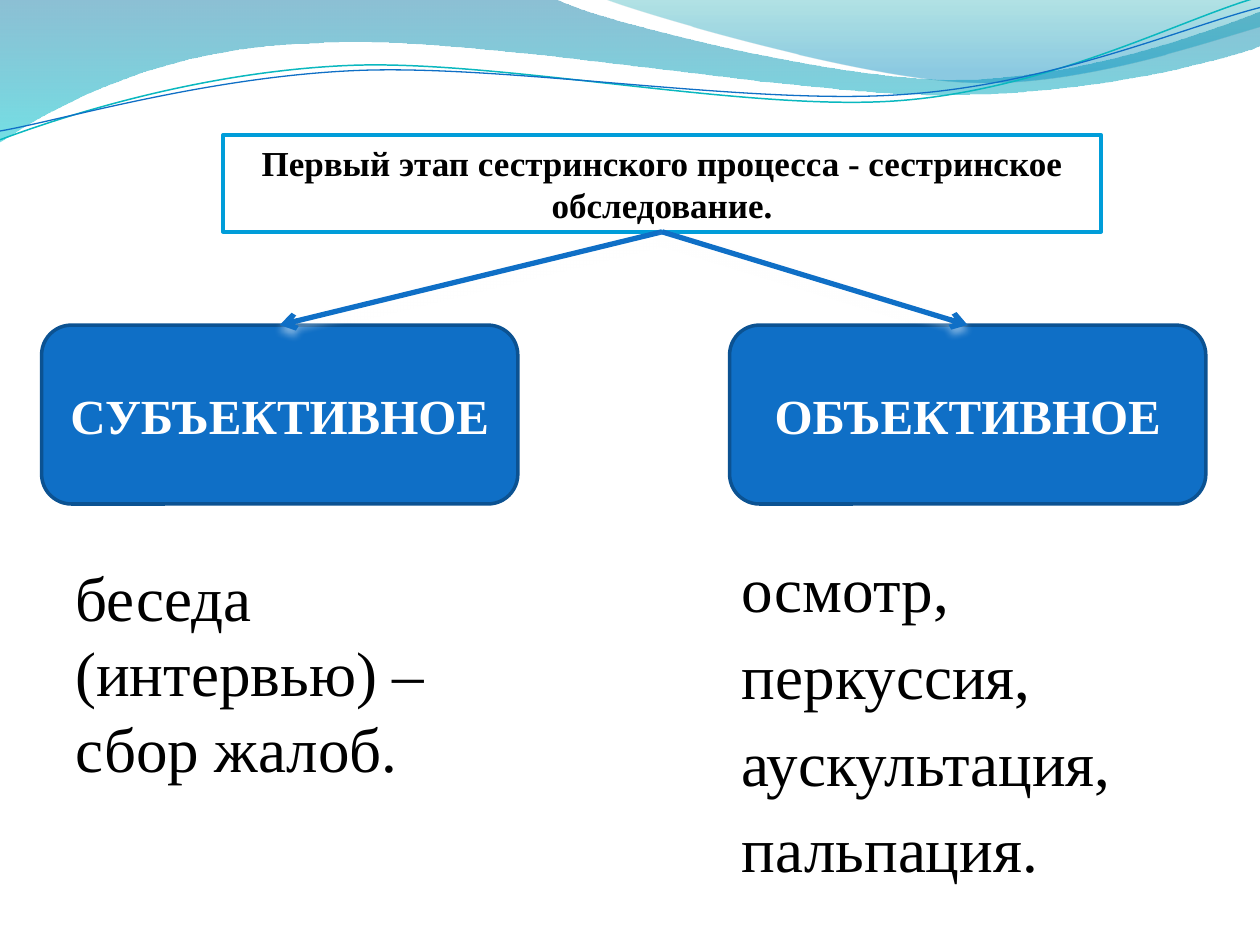
from lxml.etree import SubElement
from pptx import Presentation
from pptx.dml.color import RGBColor
from pptx.enum.shapes import MSO_CONNECTOR, MSO_SHAPE
from pptx.enum.text import MSO_ANCHOR, MSO_AUTO_SIZE, PP_ALIGN
from pptx.oxml.ns import qn
from pptx.util import Inches, Pt

FONT = "Times New Roman"
COLORS = {
    "white": "FFFFFF", "black": "000000", "blue": "0F6FC6", "navy": "0B5292",
    "sky": "009DD9", "teal_line": "0AB8BF", "deep_teal": "0074A1",
    "aqua": "00C6CF", "teal": "00A1A9", "azure": "008BBF",
}

TITLE = "Первый этап сестринского процесса - сестринское обследование."
TITLE_AREA = (1.77, 1.07, 6.97, 0.77)
KIND_TOP, KIND_SIZE = 2.58, (3.78, 1.42)
# Kind of examination, its left edge, its methods, area of the methods
KINDS = [
    ("СУБЪЕКТИВНОЕ", 0.33, "беседа (интервью) – сбор жалоб.", (0.5, 4.38, 3.44, 1.92)),
    ("ОБЪЕКТИВНОЕ", 5.79, "осмотр, перкуссия, аускультация, пальпация.", (5.79, 4.22, 4.25, 2.89)),
]

# A pair is a straight step; six numbers are a Bezier step (two controls, end)
WAVES = [
    {"steps": [(0, 0), (4.4, -0.01), (4.76, 0.17, 6.64, 0.63, 7.58, 0.63),
               (8.53, 0.63, 9.58, 0.26, 10, 0.09), (10.01, 0.36),
               (9.83, 0.44, 8.7, 0.76, 7.46, 0.75), (6.22, 0.75, 3.82, 0.28, 2.57, 0.34),
               (1.29, 0.36, 0.46, 0.83, -0.01, 1.13)],
     "stops": [(0, "deep_teal", 45), (1, "aqua", 55)]},
    {"steps": [(4.79, -0.01), (5.09, 0.11, 6.82, 0.62, 7.69, 0.65),
               (8.56, 0.69, 9.61, 0.32, 10, 0.21), (10, 0)],
     "stops": [(0, "teal", 30), (0.8, "azure", 45)]},
    {"steps": [(0, 1.11), (0.48, 0.93, 1.58, 0.57, 2.77, 0.52),
               (3.95, 0.47, 5.93, 0.89, 7.13, 0.8), (8.33, 0.71, 9.38, 0.15, 9.98, -0.02)],
     "line": ("teal_line", 0.85)},
    {"steps": [(0, 1.04), (0.47, 0.96, 1.64, 0.61, 2.83, 0.56),
               (4.03, 0.51, 5.97, 0.84, 7.17, 0.75), (8.36, 0.67, 9.41, 0.21, 10, 0.06)],
     "line": ("blue", 0.75)},
]


def rgb(name):
    return RGBColor.from_string(COLORS[name])


def draw_outline(slide, steps, close):
    """Lay every point as a straight step, then join each Bezier triple into a curve."""
    points = [(Inches(x), Inches(y))
              for step in steps for x, y in zip(step[::2], step[1::2])]
    builder = slide.shapes.build_freeform(*points[0])
    builder.add_line_segments(points[1:], close=close)
    outline = builder.convert_to_shape()
    segments = iter(list(outline._element.spPr.iter(qn("a:lnTo"))))
    for step in steps[1:]:
        parts = [next(segments) for _ in range(len(step) // 2)]
        if len(parts) == 1:
            continue
        parent = parts[0].getparent()
        curve = SubElement(parent, qn("a:cubicBezTo"))
        parts[0].addprevious(curve)
        for part in parts:
            curve.append(part[0])
            parent.remove(part)
    return outline


def add_wave(slide, steps, stops=None, line=None):
    wave = draw_outline(slide, steps, close=stops is not None)
    wave.shadow.inherit = False
    if line:
        wave.fill.background()
        wave.line.color.rgb = rgb(line[0])
        wave.line.width = Pt(line[1])
        return
    wave.line.fill.background()
    wave.fill.gradient()
    wave.fill.gradient_angle = 270
    for stop, (position, color, _) in zip(wave.fill.gradient_stops, stops):
        stop.position = position
        stop.color.rgb = rgb(color)
    shades = wave._element.spPr.iter(qn("a:srgbClr"))
    for shade, (_, _, opacity) in zip(shades, stops):
        SubElement(shade, qn("a:alpha"), val=str(opacity * 1000))


def write(shape, text, size, color, bold=False, align=PP_ALIGN.LEFT):
    frame = shape.text_frame
    frame.word_wrap = True
    frame.text = text
    paragraph = frame.paragraphs[0]
    paragraph.alignment = align
    font = paragraph.runs[0].font
    font.name, font.size, font.bold = FONT, Pt(size), bold
    font.color.rgb = rgb(color)
    return paragraph


def add_box(slide, preset, area, fill, line, text, size, color):
    box = slide.shapes.add_shape(preset, *map(Inches, area))
    box.shadow.inherit = False
    box.fill.solid()
    box.fill.fore_color.rgb = rgb(fill)
    box.line.color.rgb = rgb(line)
    box.line.width = Pt(2)
    box.text_frame.vertical_anchor = MSO_ANCHOR.MIDDLE
    write(box, text, size, color, bold=True, align=PP_ALIGN.CENTER)
    return box


def add_arrow(slide, upper, lower):
    """Join the bottom of one box to the top of another, with a soft glow."""
    arrow = slide.shapes.add_connector(MSO_CONNECTOR.STRAIGHT, 0, 0, 0, 0)
    arrow.begin_connect(upper, 2)
    arrow.end_connect(lower, 0)
    arrow.line.color.rgb = rgb("blue")
    arrow.line.width = Pt(3)
    SubElement(arrow.line._get_or_add_ln(), qn("a:tailEnd"), type="arrow")
    effects = SubElement(arrow._element.spPr, qn("a:effectLst"))
    shadow = SubElement(effects, qn("a:outerShdw"), blurRad=str(Pt(4.5)), dist=str(Pt(3)),
                        dir="5400000", rotWithShape="0")
    shade = SubElement(shadow, qn("a:srgbClr"), val=COLORS["white"])
    SubElement(shade, qn("a:alpha"), val="48000")


def main():
    deck = Presentation()
    deck.slide_width, deck.slide_height = Inches(10), Inches(7.5)
    slide = deck.slides.add_slide(deck.slide_layouts[6])

    for wave in WAVES:
        add_wave(slide, **wave)

    title = add_box(slide, MSO_SHAPE.RECTANGLE, TITLE_AREA, "white", "sky", TITLE, 20, "black")
    title.text_frame.auto_size = MSO_AUTO_SIZE.SHAPE_TO_FIT_TEXT

    kind_boxes = [
        add_box(slide, MSO_SHAPE.ROUNDED_RECTANGLE, (left, KIND_TOP, *KIND_SIZE),
                "blue", "navy", kind, 28, "white")
        for kind, left, _, _ in KINDS]
    for kind_box in kind_boxes:
        add_arrow(slide, title, kind_box)

    for _, _, methods, area in KINDS:
        methods_box = slide.shapes.add_textbox(*map(Inches, area))
        paragraph = write(methods_box, methods, 36, "black")
        methods_box.text_frame.auto_size = MSO_AUTO_SIZE.SHAPE_TO_FIT_TEXT
    # The list of objective methods is set wider
    paragraph.alignment = PP_ALIGN.JUSTIFY
    paragraph.line_spacing = 1.15
    paragraph.space_after = Pt(10)

    deck.save("out.pptx")


if __name__ == "__main__":
    main()
